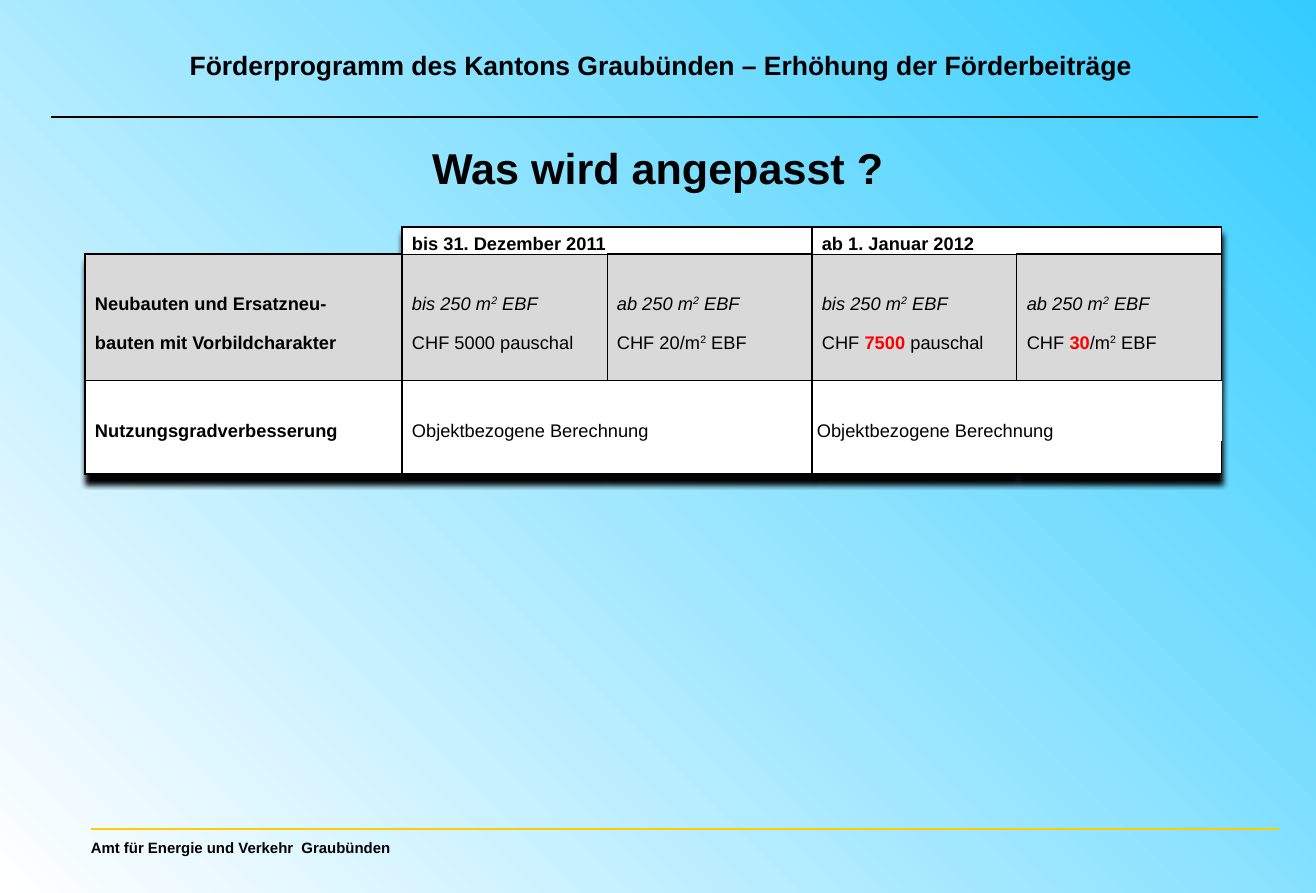
import pptx
import pptx.dml.color
import pptx.enum.shapes
import pptx.enum.text
import pptx.oxml.ns
import pptx.util
from lxml import etree

PX = 7658  # EMU per px
FONT = "Arial"
COLORS = {"ink": "000000", "paper": "FFFFFF", "sky": "33CCFF", "gold": "FFCC00",
          "grey": "D9D9D9", "accent": "FF0000"}
ANCHOR = pptx.enum.text.MSO_ANCHOR
ALIGN = pptx.enum.text.PP_ALIGN
NO_STYLE = "{2D5ABB26-0587-4C30-8999-92F81FD0307C}"

COL_WIDTHS = [99, 218] + [205] * 4
ROW_HEIGHTS = [27, 23, 37, 39, 27, 61, 33]
MERGES = [(0, 0), (2, 0), (3, 0), (5, 0), (5, 2), (5, 4)]  # each spans two columns
CELL_SIZE = 11
INDENT = 10

# Run styles: b bold, i italic, r accent colour, ^ superscript
UP_TO = [("bis 250 m", "i"), ("2", "i^"), (" EBF", "i")]
FROM = [("ab 250 m", "i"), ("2", "i^"), (" EBF", "i")]
PER_AREA = [("/m", ""), ("2", "^"), (" EBF", "")]
BY_OBJECT = [("Objektbezogene Berechnung", "")]
CELLS = {
    (0, 2): [("bis 31. Dezember 2011", "b")],
    (0, 4): [("ab 1. Januar 2012", "b")],
    (2, 0): [("Neubauten und Ersatzneu-", "b")],
    (2, 2): UP_TO, (2, 3): FROM, (2, 4): UP_TO, (2, 5): FROM,
    (3, 0): [("bauten mit Vorbildcharakter", "b")],
    (3, 2): [("CHF 5000 pauschal", "")],
    (3, 3): [("CHF 20", "")] + PER_AREA,
    (3, 4): [("CHF ", ""), ("7500 ", "br"), ("pauschal", "")],
    (3, 5): [("CHF ", ""), ("30", "br")] + PER_AREA,
    (5, 0): [("Nutzungsgradverbesserung", "b")],
    (5, 2): BY_OBJECT, (5, 4): BY_OBJECT,
}


def px(n):
    return pptx.util.Emu(n * PX)


def rgb(name):
    return pptx.dml.color.RGBColor.from_string(COLORS[name])


def sub(parent, tag, **attrs):
    """Append a DrawingML child element."""
    child = etree.SubElement(parent, pptx.oxml.ns.qn("a:" + tag))
    for key, value in attrs.items():
        child.set(key, str(value))
    return child


def add_run(p, text, size, style=""):
    r = p.add_run()
    r.text = text
    r.font.name = FONT
    r.font.size = pptx.util.Pt(size)
    r.font.bold = "b" in style
    r.font.italic = "i" in style
    r.font.color.rgb = rgb("accent" if "r" in style else "ink")
    if "^" in style:
        r._r.get_or_add_rPr().set("baseline", "30000")


def add_text(s, box, text, size, align=ALIGN.CENTER, anchor=ANCHOR.TOP):
    tf = s.shapes.add_textbox(*map(px, box)).text_frame
    tf.word_wrap = False
    tf.vertical_anchor = anchor
    p = tf.paragraphs[0]
    p.alignment = align
    add_run(p, text, size, "b")


def add_rule(s, x, y, width, color, weight):
    line = s.shapes.add_connector(pptx.enum.shapes.MSO_CONNECTOR.STRAIGHT,
                                  px(x), px(y), px(x + width), px(y))
    line.line.color.rgb = rgb(color)
    line.line.width = pptx.util.Pt(weight)
    sub(line._element.spPr, "effectLst")


def vertical_edge(row, col):
    """Weight in points of the border left of a column."""
    if col in (3, 5):
        return 0.5 if 1 <= row <= 4 else 0
    if col == 0:
        return 1 if row > 0 else 0
    return 1 if col % 2 == 0 else 0


def horizontal_edge(row, col):
    """Weight in points of the border above a row."""
    if row == 0:
        return 1 if col >= 2 else 0
    if row == 1:
        return 0.5 if col in (2, 4) else 1
    return {5: 0.5, 7: 1}.get(row, 0)


def set_borders(cell, row, col):
    tc_pr = cell._tc.get_or_add_tcPr()
    edges = {"lnL": vertical_edge(row, col), "lnR": vertical_edge(row, col + 1),
             "lnT": horizontal_edge(row, col), "lnB": horizontal_edge(row + 1, col)}
    for tag, weight in edges.items():
        if weight:
            ln = sub(tc_pr, tag, w=int(pptx.util.Pt(weight)))
            sub(sub(ln, "solidFill"), "srgbClr", val=COLORS["ink"])
        else:
            sub(sub(tc_pr, tag, w=0), "noFill")


def fill_cell(cell, row, col):
    cell.margin_left = px(INDENT // 2 if (row, col) == (5, 4) else INDENT)
    cell.margin_right = cell.margin_top = cell.margin_bottom = 0
    cell.vertical_anchor = ANCHOR.BOTTOM
    set_borders(cell, row, col)
    if row == 0 and col < 2:
        cell.fill.background()
    else:
        cell.fill.solid()
        cell.fill.fore_color.rgb = rgb("grey" if 1 <= row <= 4 else "paper")
    p = cell.text_frame.paragraphs[0]
    for text, style in CELLS.get((row, col), []):
        add_run(p, text, CELL_SIZE, style)
    sub(p._p, "endParaRPr", sz=CELL_SIZE * 100)


def style_table(table):
    """Drop the banded style and put a soft shadow below."""
    table.first_row = table.horz_banding = False
    tbl_pr = table._tbl.tblPr
    style_id = tbl_pr.find(pptx.oxml.ns.qn("a:tableStyleId"))
    style_id.text = NO_STYLE
    effects = sub(tbl_pr, "effectLst")
    style_id.addprevious(effects)
    shadow = sub(effects, "outerShdw", blurRad=px(6), dist=px(8), dir=5400000,
                 algn="t", rotWithShape=0)
    sub(shadow, "srgbClr", val=COLORS["ink"])


def add_subsidy_table(s, x, y):
    table = s.shapes.add_table(len(ROW_HEIGHTS), len(COL_WIDTHS), px(x), px(y),
                               px(sum(COL_WIDTHS)), px(sum(ROW_HEIGHTS))).table
    style_table(table)
    for column, width in zip(table.columns, COL_WIDTHS):
        column.width = px(width)
    for row, height in zip(table.rows, ROW_HEIGHTS):
        row.height = px(height)
    for row, col in MERGES:
        table.cell(row, col).merge(table.cell(row, col + 1))
    for row in range(len(ROW_HEIGHTS)):
        for col in range(len(COL_WIDTHS)):
            fill_cell(table.cell(row, col), row, col)


def add_background(s):
    fill = s.background.fill
    fill.gradient()
    fill.gradient_angle = 45
    for stop, name in zip(fill.gradient_stops, ("paper", "sky")):
        stop.color.rgb = rgb(name)


def add_header(s, x, y, width):
    add_text(s, (x + 121, y, 978, 44),
             "Förderprogramm des Kantons Graubünden – Erhöhung der Förderbeiträge", 16)
    add_rule(s, x, y + 74, width, "ink", 0.75)
    add_text(s, (x + 367, y + 93, 480, 64), "Was wird angepasst ?", 26)


def add_footer(s, x, y, width):
    add_rule(s, x, y, width, "gold", 1)
    add_text(s, (x - 12, y + 4, 328, 30), "Amt für Energie und Verkehr  Graubünden", 9,
             ALIGN.LEFT, ANCHOR.MIDDLE)


def main():
    prs = pptx.Presentation()
    prs.slide_width, prs.slide_height = px(1316), px(893)
    s = prs.slides.add_slide(prs.slide_layouts[6])
    add_background(s)
    add_footer(s, 91, 829, 1188)
    add_header(s, 51, 43, 1207)
    add_subsidy_table(s, 85, 227)
    prs.save("out.pptx")


if __name__ == "__main__":
    main()
